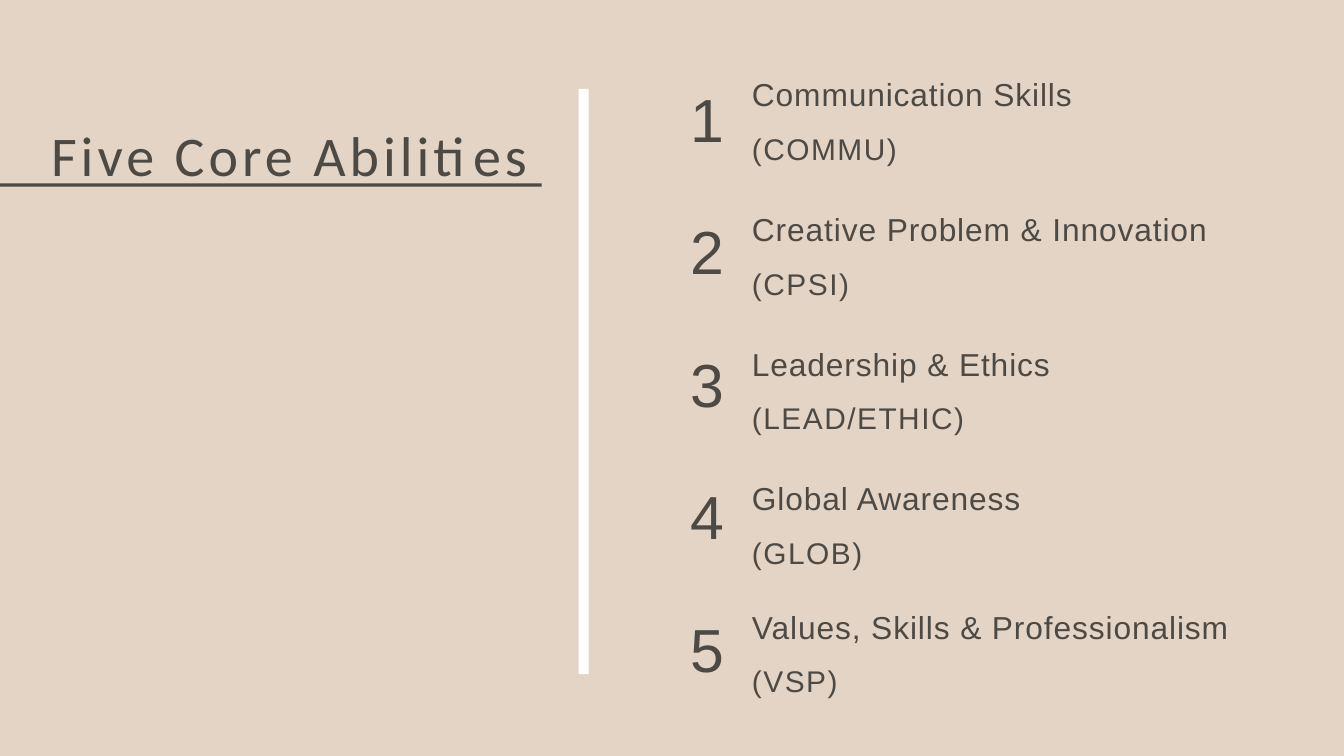
from dataclasses import dataclass

from pptx import Presentation
from pptx.dml.color import RGBColor
from pptx.enum.shapes import MSO_SHAPE
from pptx.enum.text import MSO_ANCHOR, MSO_AUTO_SIZE, PP_ALIGN
from pptx.util import Pt


@dataclass(frozen=True)
class TextStyle:
    font: str
    size: float
    leading: float
    tracking: float
    align: PP_ALIGN = PP_ALIGN.LEFT


@dataclass(frozen=True)
class Theme:
    background = RGBColor(0xE4, 0xD4, 0xC5)
    ink = RGBColor(0x4D, 0x4A, 0x46)
    divider = RGBColor(0xFF, 0xFD, 0xFD)
    title = TextStyle("Calibri", 60, 88.6, 4.3)
    number = TextStyle("Arial", 65.1, 80, 3.9, PP_ALIGN.RIGHT)
    ability = TextStyle("Arial", 34, 40.8, 1)
    code = TextStyle("Arial", 32, 56, 1.6)


THEME = Theme()

ABILITIES = [
    ("Communication Skills", "(COMMU)"),
    ("Creative Problem & Innovation", "(CPSI)"),
    ("Leadership & Ethics", "(LEAD/ETHIC)"),
    ("Global Awareness", "(GLOB)"),
    ("Values, Skills & Professionalism", "(VSP)"),
]
NUMBER_PITCH = 142
LABEL_PITCH = 144.3
LAST_LABEL_LIFT = 6.9


def write(frame, text, style):
    frame.margin_left = frame.margin_right = 0
    frame.margin_top = frame.margin_bottom = 0
    frame.word_wrap = True
    frame.auto_size = MSO_AUTO_SIZE.NONE
    frame.vertical_anchor = MSO_ANCHOR.TOP
    line = frame.paragraphs[0]
    line.alignment = style.align
    line.line_spacing = Pt(style.leading)
    line.font.name = style.font
    line.font.size = Pt(style.size)
    line.font.color.rgb = THEME.ink
    run = line.add_run()
    run.text = text
    run.font._element.set("spc", str(round(style.tracking * 100)))


def add_text(slide, left, top, width, height, text, style):
    box = slide.shapes.add_textbox(Pt(left), Pt(top), Pt(width), Pt(height))
    write(box.text_frame, text, style)


def add_bar(slide, left, top, width, height, color):
    bar = slide.shapes.add_shape(
        MSO_SHAPE.RECTANGLE, Pt(left), Pt(top), Pt(width), Pt(height))
    bar.shadow.inherit = False
    bar.fill.solid()
    bar.fill.fore_color.rgb = color
    bar.line.fill.background()


def add_heading(slide, left, top, width, height):
    """Title with a rule that runs in from the slide's left edge."""
    title = slide.shapes.title
    title.left, title.top = Pt(left), Pt(top)
    title.width, title.height = Pt(width), Pt(height)
    write(title.text_frame, "Five Core Abilities", THEME.title)
    add_bar(slide, 0, top + height, left + width, 3.5, THEME.ink)


def add_abilities(slide, left, top, width):
    label_left = left + 91.5
    label_width = width - 91.5
    last = len(ABILITIES) - 1
    for i, (ability, code) in enumerate(ABILITIES):
        add_text(slide, left, top + 5 + i * NUMBER_PITCH, 62, 80,
                 str(i + 1), THEME.number)
        label_top = top + i * LABEL_PITCH - (LAST_LABEL_LIFT if i == last else 0)
        add_text(slide, label_left, label_top, label_width, 41,
                 ability, THEME.ability)
        add_text(slide, label_left, label_top + 41.8, label_width, 56,
                 code, THEME.code)


def main():
    deck = Presentation()
    deck.slide_width, deck.slide_height = Pt(1440), Pt(810)
    slide = deck.slides.add_slide(deck.slide_layouts.get_by_name("Title Only"))
    slide.background.fill.solid()
    slide.background.fill.fore_color.rgb = THEME.background

    add_heading(slide, 54.7, 113, 525.6, 83.5)
    add_bar(slide, 619.9, 95.2, 10.8, 627, THEME.divider)
    add_abilities(slide, 714.2, 80.6, 660)
    deck.save("out.pptx")


if __name__ == "__main__":
    main()
